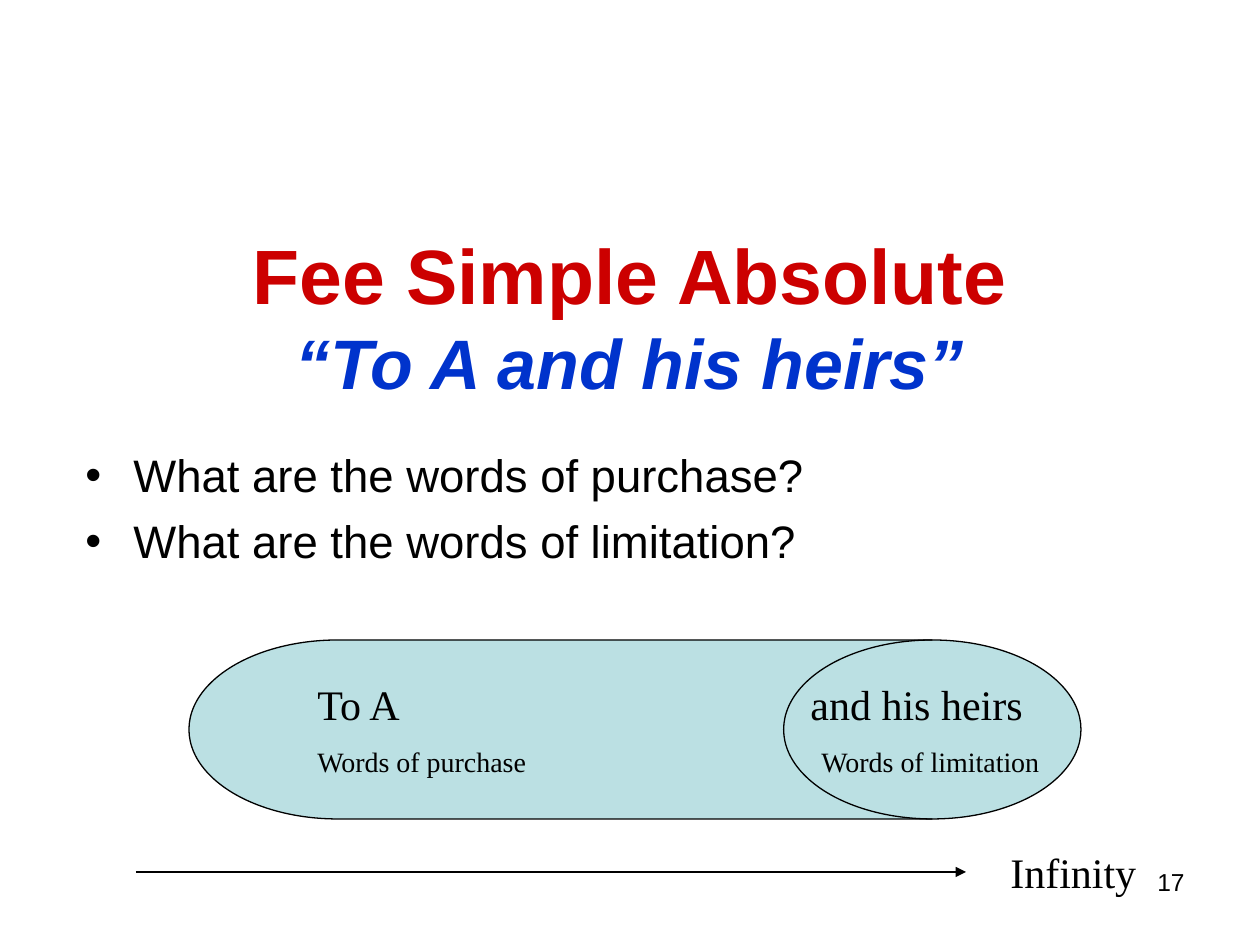
from lxml import etree
from pptx import Presentation
from pptx.dml.color import RGBColor
from pptx.enum.shapes import MSO_CONNECTOR, MSO_SHAPE
from pptx.enum.text import MSO_ANCHOR, PP_ALIGN
from pptx.oxml.ns import qn
from pptx.util import Emu, Pt

PX = 914400 / 126
DRUM = MSO_SHAPE.FLOWCHART_MAGNETIC_DISK.FLOWCHART_DIRECT_ACCESS_STORAGE
STRAIGHT = MSO_CONNECTOR.STRAIGHT
MIDDLE = MSO_ANCHOR.MIDDLE
CENTER, RIGHT = PP_ALIGN.CENTER, PP_ALIGN.RIGHT
COLORS = {"red": "CC0000", "blue": "0033CC", "black": "000000", "teal": "BBE0E3"}
SANS, SERIF = "Arial", "Times New Roman"


def px(value):
    return Emu(round(value * PX))


def color(name):
    return RGBColor.from_string(COLORS[name])


def set_values(target, values):
    for name, value in values.items():
        setattr(target, name, value)


def set_font(font, name, size, color_name="black", **values):
    set_values(font, {"name": name, "size": Pt(size), **values})
    font.color.rgb = color(color_name)


def set_line(line):
    line.color.rgb = color("black")
    line.width = Pt(0.75)


def add_frame(slide, left, top, width, height):
    frame = slide.shapes.add_textbox(px(left), px(top), px(width), px(height)).text_frame
    frame.word_wrap = True
    return frame


def set_indent(paragraph, margin, first=0):
    properties = paragraph._p.get_or_add_pPr()
    properties.set("marL", str(px(margin)))
    properties.set("indent", str(px(first)))
    return properties


def add_title(slide):
    frame = add_frame(slide, 63, 179, 1134, 273)
    frame.vertical_anchor = MIDDLE
    paragraph = frame.paragraphs[0]
    paragraph.alignment = CENTER
    heading = paragraph.add_run()
    heading.text = "Fee Simple Absolute"
    set_font(heading.font, SANS, 44, "red", bold=True)
    paragraph.add_line_break()
    quote = paragraph.add_run()
    quote.text = "“To A and his heirs”"
    set_font(quote.font, SANS, 40, "blue", bold=True, italic=True)


def add_bullets(slide, box, texts):
    frame = add_frame(slide, *box)
    for index, text in enumerate(texts):
        paragraph = frame.add_paragraph() if index else frame.paragraphs[0]
        paragraph.text = text
        if index:
            paragraph.space_before = Pt(6.5)
        properties = set_indent(paragraph, 48, -48)
        etree.SubElement(properties, qn("a:buFont"), typeface=SANS)
        etree.SubElement(properties, qn("a:buChar"), char="•")
        set_font(paragraph.font, SANS, 26)
        set_font(paragraph.runs[0].font, SANS, 26)


def add_label(slide, box, lines, font=SERIF, alignment=None):
    """Each line is a text, its size in points and its left indent."""
    frame = add_frame(slide, *box)
    for index, (text, size, indent) in enumerate(lines):
        paragraph = frame.add_paragraph() if index else frame.paragraphs[0]
        paragraph.text = text
        paragraph.alignment = alignment
        if index:
            paragraph.space_before = Pt(9)
        if indent:
            set_indent(paragraph, indent)
        set_font(paragraph.runs[0].font, font, size)


def add_drum(slide, left, top, width, height):
    shape = slide.shapes.add_shape(DRUM, px(left), px(top), px(width), px(height))
    shape.shadow.inherit = False
    shape.fill.solid()
    shape.fill.fore_color.rgb = color("teal")
    set_line(shape.line)


def add_arrow(slide, start, end, y):
    arrow = slide.shapes.add_connector(STRAIGHT, px(start), px(y), px(end), px(y))
    set_line(arrow.line)
    etree.SubElement(arrow.line._get_or_add_ln(), qn("a:tailEnd"), type="triangle")
    etree.SubElement(arrow._element.spPr, qn("a:effectLst"))


def main():
    presentation = Presentation()
    presentation.slide_width, presentation.slide_height = px(1260), px(945)
    slide = presentation.slides.add_slide(presentation.slide_layouts[6])

    # Title and questions
    add_title(slide)
    add_bullets(slide, (73, 441, 1134, 116),
                ["What are the words of purchase?", "What are the words of limitation?"])

    # Drum with the two parts of the grant
    add_drum(slide, 189, 640, 892, 179)
    add_label(slide, (305, 672, 315, 113),
              [("To A", 24, 0), ("Words of purchase", 16, 0)])
    add_label(slide, (788, 672, 346, 113),
              [("and his heirs", 24, 10), ("Words of limitation", 16, 21)])

    # Timeline
    add_arrow(slide, 136, 966, 872)
    add_label(slide, (998, 840, 262, 63), [("Infinity", 24, 0)])

    # Slide number
    add_label(slide, (903, 861, 294, 66), [("17", 14, 0)], SANS, RIGHT)

    presentation.save("out.pptx")


if __name__ == "__main__":
    main()
